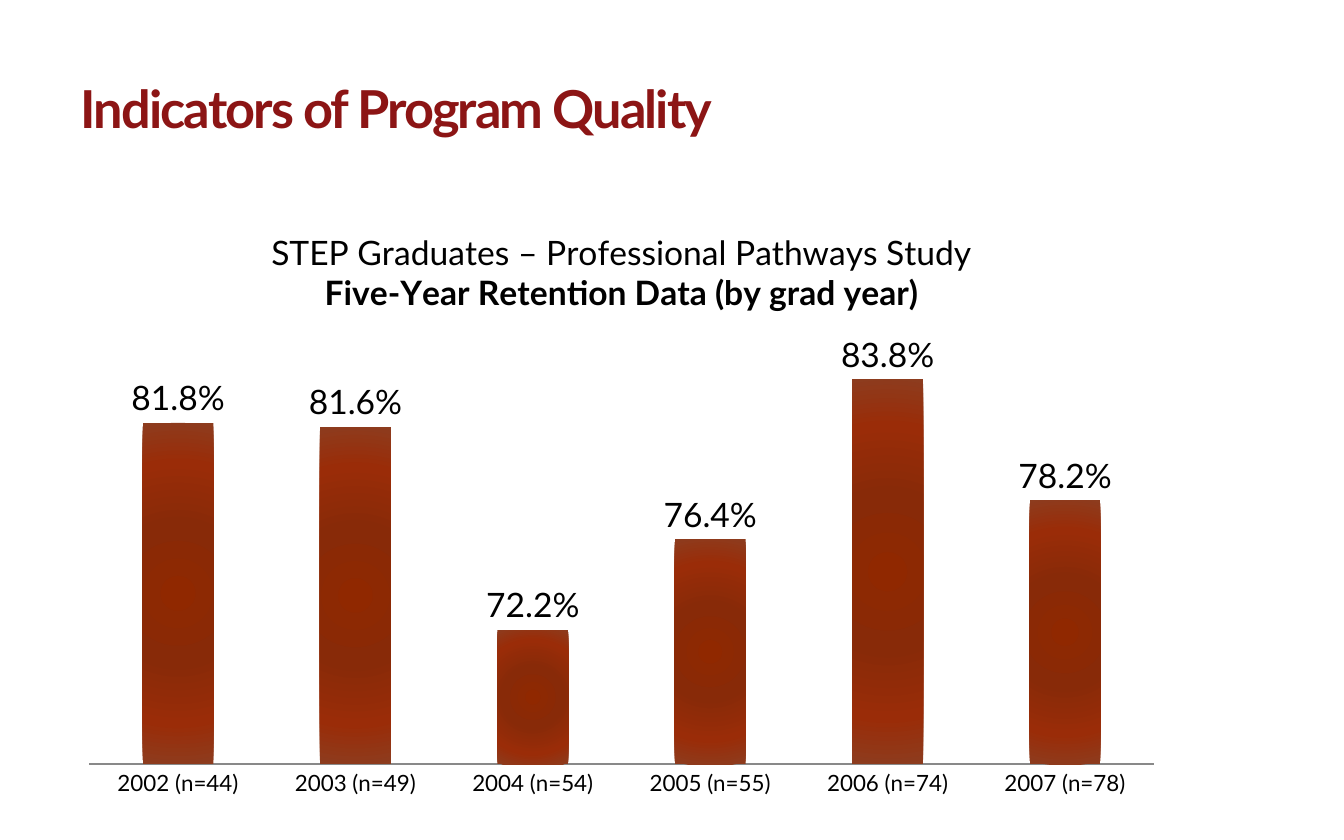
from lxml import etree
from pptx import Presentation
from pptx import util as u
from pptx.chart.data import CategoryChartData
from pptx.dml.color import RGBColor
from pptx.enum import chart as ch, text
from pptx.oxml import parse_xml
from pptx.oxml.ns import nsdecls

CARDINAL = RGBColor(0x8C, 0x15, 0x15)
BLACK = RGBColor(0, 0, 0)
AXIS_GRAY = RGBColor(0x89, 0x89, 0x89)
BAR_STOPS = [(0, RGBColor(0x90, 0x28, 0x00)), (40, RGBColor(0x88, 0x2A, 0x08)),
             (75, RGBColor(0x9A, 0x2C, 0x08)), (100, RGBColor(0x8D, 0x3C, 0x1E))]
FONT = "Lato"

RETENTION = {
    "2002 (n=44)": 0.818,
    "2003 (n=49)": 0.816,
    "2004 (n=54)": 0.722,
    "2005 (n=55)": 0.764,
    "2006 (n=74)": 0.838,
    "2007 (n=78)": 0.782,
}


def style(font, size, color=BLACK, bold=False):
    font.name, font.size, font.bold = FONT, u.Pt(size), bold
    font.color.rgb = color


prs = Presentation()
prs.slide_width, prs.slide_height = u.Inches(10), u.Inches(6.25)
W, H = prs.slide_width, prs.slide_height
slide = prs.slides.add_slide(prs.slide_layouts[5])
left = int(W * 0.05)

# Heading
heading = slide.shapes.title
heading.left, heading.top = left, u.Inches(0.28)
heading.width, heading.height = u.Inches(8.33), u.Inches(1.04)
frame = heading.text_frame
frame.text = "Indicators of Program Quality"
frame.vertical_anchor = text.MSO_ANCHOR.MIDDLE
frame.auto_size = text.MSO_AUTO_SIZE.NONE
line = frame.paragraphs[0]
line.alignment = text.PP_ALIGN.LEFT
style(line.font, 28, CARDINAL, True)
line.runs[0].font._element.set("spc", "-100")

# Retention chart
data = CategoryChartData(number_format="0.0%")
data.categories = list(RETENTION)
data.add_series("Series 1", list(RETENTION.values()))
retention = slide.shapes.add_chart(
    ch.XL_CHART_TYPE.COLUMN_CLUSTERED, left, u.Inches(1.53),
    int(W * 0.825), u.Inches(4.47), data).chart
style(retention.font, 18)
retention.has_legend = False

retention.has_title = True
caption = retention.chart_title.text_frame
caption.text = ("STEP Graduates – Professional Pathways Study\n"
                "Five-Year Retention Data (by grad year)")
for paragraph, bold in zip(caption.paragraphs, (False, True)):
    style(paragraph.font, 18, bold=bold)
    style(paragraph.runs[0].font, 18, bold=bold)
retention.chart_title.include_in_layout = False

years = retention.category_axis
years.major_tick_mark = years.minor_tick_mark = ch.XL_TICK_MARK.NONE
years.format.line.color.rgb = AXIS_GRAY
years.format.line.width = u.Pt(0.75)
style(years.tick_labels.font, 12)

rates = retention.value_axis
rates.visible = False
rates.has_major_gridlines = False
rates.minimum_scale, rates.maximum_scale = 0.66, 0.86

bars = retention.plots[0]
bars.gap_width, bars.overlap = 150, -25
bars.vary_by_categories = False
bars.has_data_labels = True
labels = bars.data_labels
labels.show_value = True
labels.number_format, labels.number_format_is_linked = "0.0%", False
labels.position = ch.XL_LABEL_POSITION.OUTSIDE_END
style(labels.font, 18)

# Radial bar fill, from the centre outwards
fill = bars.series[0].format.fill
fill.solid()
fill.fore_color.rgb = BAR_STOPS[-1][1]
solid = bars.series[0]._element.spPr.find("{*}solidFill")
stops = "".join(f'<a:gs pos="{share * 1000}"><a:srgbClr val="{color}"/></a:gs>'
                for share, color in BAR_STOPS)
solid.getparent().replace(solid, parse_xml(
    f'<a:gradFill {nsdecls("a")} rotWithShape="1"><a:gsLst>{stops}</a:gsLst>'
    '<a:path path="circle"><a:fillToRect l="50000" t="50000" r="50000" b="50000"/>'
    '</a:path></a:gradFill>'))

# Plot area as shares of the chart
area = retention._chartSpace.chart.plotArea
for old in area.findall("{*}layout"):
    area.remove(old)
layout = parse_xml(f'<c:layout {nsdecls("c")}><c:manualLayout/></c:layout>')
settings = {"layoutTarget": "inner", "xMode": "edge", "yMode": "edge",
            "x": 0.02, "y": 0.21, "w": 0.96, "h": 0.72}
for tag, value in settings.items():
    etree.SubElement(layout[0], f"{{{layout.nsmap['c']}}}{tag}").set("val", str(value))
area.insert(0, layout)

prs.save("out.pptx")
